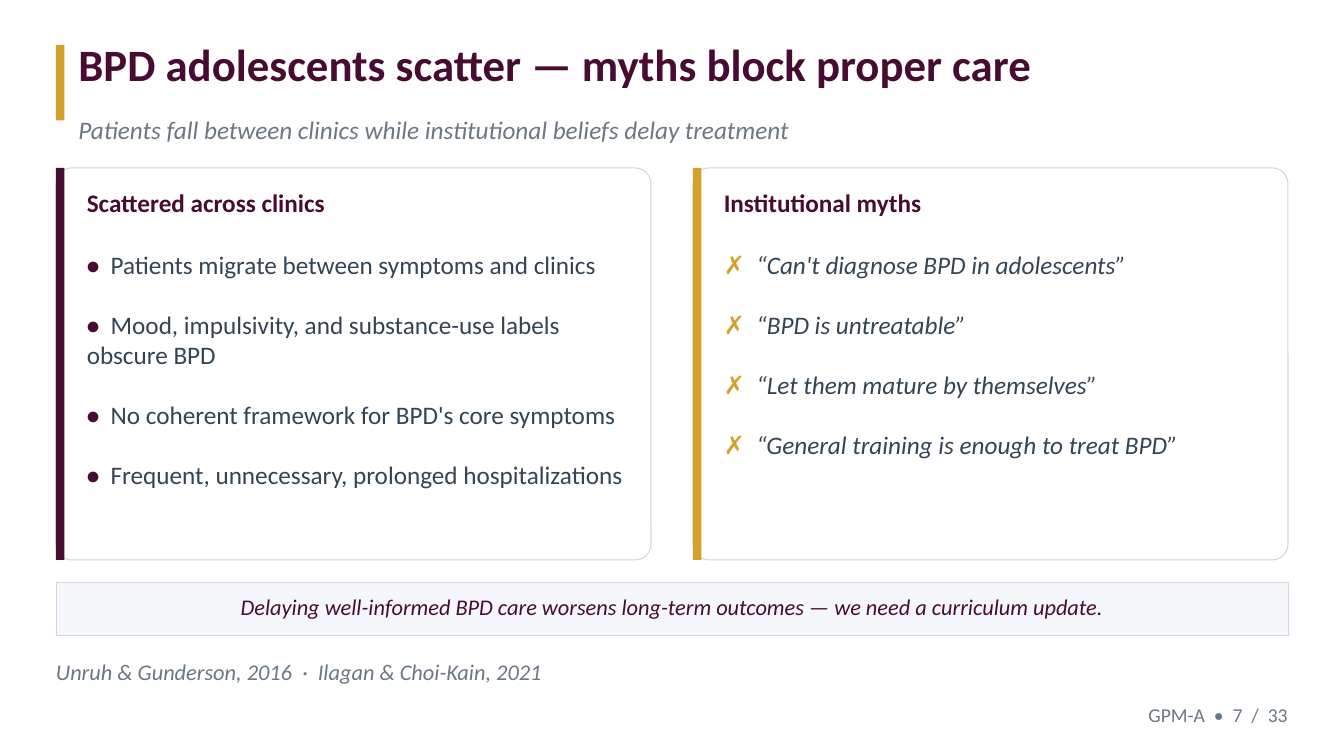
import pptx
import pptx.util
import pptx.dml.color
import pptx.enum.shapes
import pptx.enum.text

RGBColor = pptx.dml.color.RGBColor
MSO_SHAPE = pptx.enum.shapes.MSO_SHAPE
PP_ALIGN = pptx.enum.text.PP_ALIGN

PLUM = RGBColor(0x48, 0x0C, 0x32)
GOLD = RGBColor(0xD4, 0xA2, 0x2C)
SLATE = RGBColor(0x33, 0x44, 0x55)
GREY = RGBColor(0x6B, 0x77, 0x85)
BORDER = RGBColor(0xD0, 0xD7, 0xDE)
PALE = RGBColor(0xF5, 0xF7, 0xFA)
WHITE = RGBColor(0xFF, 0xFF, 0xFF)

TITLE = "BPD adolescents scatter — myths block proper care"
SUBTITLE = "Patients fall between clinics while institutional beliefs delay treatment"
CARDS = [
    {
        "heading": "Scattered across clinics",
        "accent": PLUM,
        "mark": "•  ",
        "italic": False,
        "items": [
            "Patients migrate between symptoms and clinics",
            "Mood, impulsivity, and substance-use labels obscure BPD",
            "No coherent framework for BPD's core symptoms",
            "Frequent, unnecessary, prolonged hospitalizations",
        ],
    },
    {
        "heading": "Institutional myths",
        "accent": GOLD,
        "mark": "✗  ",
        "italic": True,
        "items": [
            "“Can't diagnose BPD in adolescents”",
            "“BPD is untreatable”",
            "“Let them mature by themselves”",
            "“General training is enough to treat BPD”",
        ],
    },
]
MESSAGE = "Delaying well-informed BPD care worsens long-term outcomes — we need a curriculum update."
SOURCES = "Unruh & Gunderson, 2016  ·  Ilagan & Choi-Kain, 2021"
FOOTER = "GPM-A  •  7  /  33"

PX = 6350
WIDTH, HEIGHT = 1920, 1080
MARGIN = 80
CONTENT_W = WIDTH - 2 * MARGIN
BAR_W = 12
CARD_TOP, CARD_H, CARD_GAP = 240, 560, 60
CARD_W = (CONTENT_W - CARD_GAP) // 2
CARD_PAD, CARD_TEXT_W = 44, 786
ITEM_GAP = 21.2


def emu(*lengths):
    return [n * PX for n in lengths]


def style(size, color, bold=False, italic=False):
    return {"size": pptx.util.Pt(size), "name": "Calibri", "color": color,
            "bold": bold, "italic": italic}


def add_box(s, kind, at, fill, line_pt=0):
    sp = s.shapes.add_shape(kind, *emu(*at))
    sp.shadow.inherit = False
    sp.fill.solid()
    sp.fill.fore_color.rgb = fill
    if line_pt:
        sp.line.color.rgb = BORDER
        sp.line.width = pptx.util.Pt(line_pt)
    else:
        sp.line.fill.background()
    return sp


def add_text(s, at, paragraphs, align=PP_ALIGN.LEFT, gap=0):
    tf = s.shapes.add_textbox(*emu(*at)).text_frame
    frame = {"word_wrap": True, "margin_left": 0, "margin_top": 0,
             "margin_right": 0, "margin_bottom": 0,
             "auto_size": pptx.enum.text.MSO_AUTO_SIZE.SHAPE_TO_FIT_TEXT}
    for key, value in frame.items():
        setattr(tf, key, value)
    for i, runs in enumerate(paragraphs):
        p = tf.add_paragraph() if i else tf.paragraphs[0]
        p.alignment = align
        if i and gap:
            p.space_before = pptx.util.Pt(gap)
        for text, fmt in runs:
            r = p.add_run()
            r.text = text
            for key, value in fmt.items():
                if key == "color":
                    r.font.color.rgb = value
                else:
                    setattr(r.font, key, value)


def add_card(s, left, card):
    sp = add_box(s, MSO_SHAPE.ROUNDED_RECTANGLE,
                 (left, CARD_TOP, CARD_W, CARD_H), WHITE, 0.75)
    sp.adjustments[0] = 0.04
    add_box(s, MSO_SHAPE.RECTANGLE, (left, CARD_TOP, BAR_W, CARD_H), card["accent"])
    text_left = left + CARD_PAD
    add_text(s, (text_left, CARD_TOP + 28, CARD_TEXT_W, 60),
             [[(card["heading"], style(18, PLUM, bold=True))]])
    mark = (card["mark"], style(18, card["accent"], bold=True))
    body = style(18, SLATE, italic=card["italic"])
    add_text(s, (text_left, CARD_TOP + 116, CARD_TEXT_W, 348),
             [[mark, (item, body)] for item in card["items"]], gap=ITEM_GAP)


def main():
    prs = pptx.Presentation()
    prs.slide_width, prs.slide_height = emu(WIDTH, HEIGHT)
    s = prs.slides.add_slide(prs.slide_layouts[6])

    add_box(s, MSO_SHAPE.RECTANGLE, (MARGIN, 64, BAR_W, 108), GOLD)
    add_text(s, (112, 52, 1728, 112), [[(TITLE, style(32, PLUM, bold=True))]])
    add_text(s, (112, 164, 1728, 60), [[(SUBTITLE, style(18, GREY, italic=True))]])

    for i, card in enumerate(CARDS):
        add_card(s, MARGIN + i * (CARD_W + CARD_GAP), card)

    add_box(s, MSO_SHAPE.RECTANGLE, (MARGIN, 832, CONTENT_W, 76), PALE, 0.5)
    add_text(s, (120, 847, 1680, 39),
             [[(MESSAGE, style(16, PLUM, italic=True))]], PP_ALIGN.CENTER)
    add_text(s, (MARGIN, 940, 1400, 52), [[(SOURCES, style(16, GREY, italic=True))]])
    add_text(s, (1540, 1004, 300, 35), [[(FOOTER, style(14, GREY))]], PP_ALIGN.RIGHT)

    prs.save("out.pptx")


if __name__ == "__main__":
    main()
